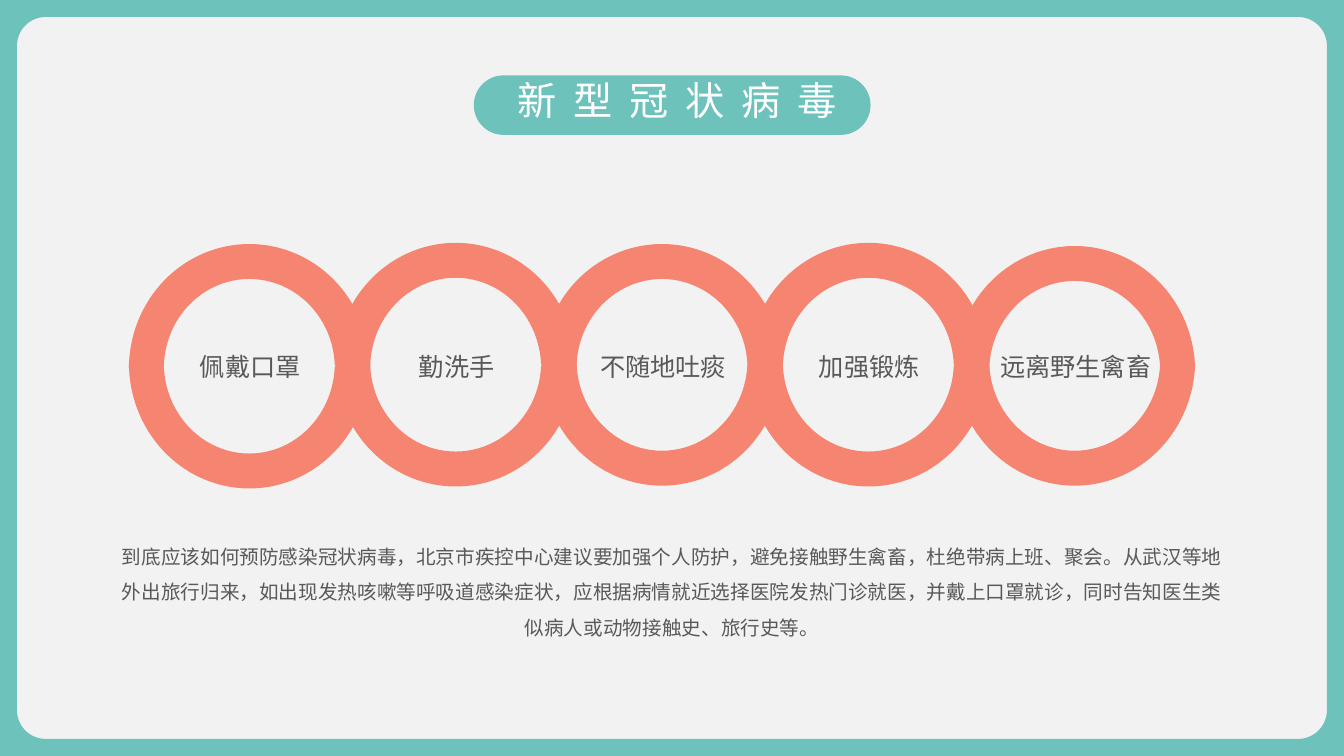
from math import cos, radians, sin

from pptx import Presentation
from pptx.dml.color import RGBColor
from pptx.enum.shapes import MSO_SHAPE as Preset
from pptx.enum.text import MSO_AUTO_SIZE as AutoSize, PP_ALIGN as Align
from pptx.util import Cm, Pt

# Content
TITLE = "新型冠状病毒"
BODY = (
    "到底应该如何预防感染冠状病毒，北京市疾控中心建议要加强个人防护，避免接触野生禽畜，"
    "杜绝带病上班、聚会。从武汉等地外出旅行归来，如出现发热咳嗽等呼吸道感染症状，"
    "应根据病情就近选择医院发热门诊就医，并戴上口罩就诊，同时告知医生类似病人或动物接触史、旅行史等。"
)
# Label, then (top, height) in cm of the upper and of the lower half ring
RINGS = [
    ("佩戴口罩", (6.15, 6.27), (5.99, 6.32)),
    ("勤洗手", (6.12, 6.32), (5.99, 6.27)),
    ("不随地吐痰", (6.15, 6.27), (5.92, 6.32)),
    ("加强锻炼", (6.12, 6.32), (5.99, 6.27)),
    ("远离野生禽畜", (6.2, 6.32), (5.92, 6.32)),
]

# Style and layout, lengths in cm
TEAL, CORAL, GREY, WHITE, PAPER = "6DC2BB", "F58470", "595959", "FFFFFF", "F2F2F2"
FONT = "Arial"
WIDTH, HEIGHT = 33.87, 19.05
BORDER, CORNER = 0.43, 0.72
RING_LEFT, RING_PITCH, RING_WIDTH = 3.25, 5.2, 6.07
LABEL_INSET, LABEL_TOP, LABEL_WIDTH, LABEL_HEIGHT = 0.95, 8.53, 4.22, 1.07
HALF_RING = (108, 214.439, 0.145)


def paint(fill, color):
    fill.solid()
    fill.fore_color.rgb = RGBColor.from_string(color)


def finish(shape, color):
    paint(shape.fill, color)
    shape.line.fill.background()
    shape.shadow.inherit = False


def add_preset(slide, preset, box, color, adjustments):
    shape = slide.shapes.add_shape(preset, *map(Cm, box))
    finish(shape, color)
    for index, value in enumerate(adjustments):
        shape.adjustments[index] = value
    return shape


def add_text(slide, box, text, size, color, margins, align=Align.LEFT,
             spacing=None, wrap=True, grow=True):
    shape = slide.shapes.add_textbox(*map(Cm, box))
    frame = shape.text_frame
    frame.word_wrap = wrap
    frame.auto_size = AutoSize.SHAPE_TO_FIT_TEXT if grow else AutoSize.NONE
    frame.margin_left = frame.margin_right = Cm(margins[0])
    frame.margin_top = frame.margin_bottom = Cm(margins[1])
    frame.text = text
    paragraph = frame.paragraphs[0]
    paragraph.alignment = align
    paragraph.line_spacing = spacing
    font = paragraph.runs[0].font
    font.name, font.size = FONT, Pt(size)
    paint(font.fill, color)
    return paragraph.runs[0]


def add_frame(slide):
    """Full-slide border with a rounded window."""
    low, right, bottom = BORDER + CORNER, WIDTH - BORDER - CORNER, HEIGHT - BORDER - CORNER
    corners = [(right, bottom), (low, bottom), (low, low), (right, low)]
    window = [
        (Cm(x + CORNER * cos(radians(angle))), Cm(y + CORNER * sin(radians(angle))))
        for quarter, (x, y) in enumerate(corners)
        for angle in range(90 * quarter, 90 * quarter + 91, 6)
    ]
    window.reverse()
    builder = slide.shapes.build_freeform(0, 0)
    builder.add_line_segments(
        [(Cm(WIDTH), 0), (Cm(WIDTH), Cm(HEIGHT)), (0, Cm(HEIGHT))], close=True)
    builder.move_to(*window[0])
    builder.add_line_segments(window[1:], close=True)
    finish(builder.convert_to_shape(), TEAL)


def main():
    presentation = Presentation()
    presentation.slide_width, presentation.slide_height = Cm(WIDTH), Cm(HEIGHT)
    slide = presentation.slides.add_slide(presentation.slide_layouts[6])
    paint(slide.background.fill, PAPER)

    # Border and title
    add_frame(slide)
    add_preset(slide, Preset.ROUNDED_RECTANGLE, (11.94, 1.9, 10, 1.5), TEAL, [0.5])
    title = add_text(slide, (12.8, 1.8, 8.97, 1.45), TITLE, 28, WHITE,
                     (0.25, 0.13), wrap=False)
    title.font._element.set("spc", "1200")

    # Chain of rings, each made of two half rings
    for index, (label, upper, lower) in enumerate(RINGS):
        left = RING_LEFT + index * RING_PITCH
        for top, height in (upper, lower):
            half = add_preset(slide, Preset.BLOCK_ARC, (left, top, RING_WIDTH, height),
                              CORAL, HALF_RING)
        half._element.spPr.xfrm.set("flipV", "1")  # the lower half comes last
        add_text(slide, (left + LABEL_INSET, LABEL_TOP, LABEL_WIDTH, LABEL_HEIGHT),
                 label, 18, GREY, (0.18, 0.1), Align.CENTER, 1.3)

    # Explanation
    add_text(slide, (2.54, 13.34, 28.8, 4.11), BODY, 14, GREY, (0.48, 0.1),
             Align.CENTER, 1.5, grow=False)

    presentation.save("out.pptx")


if __name__ == "__main__":
    main()
